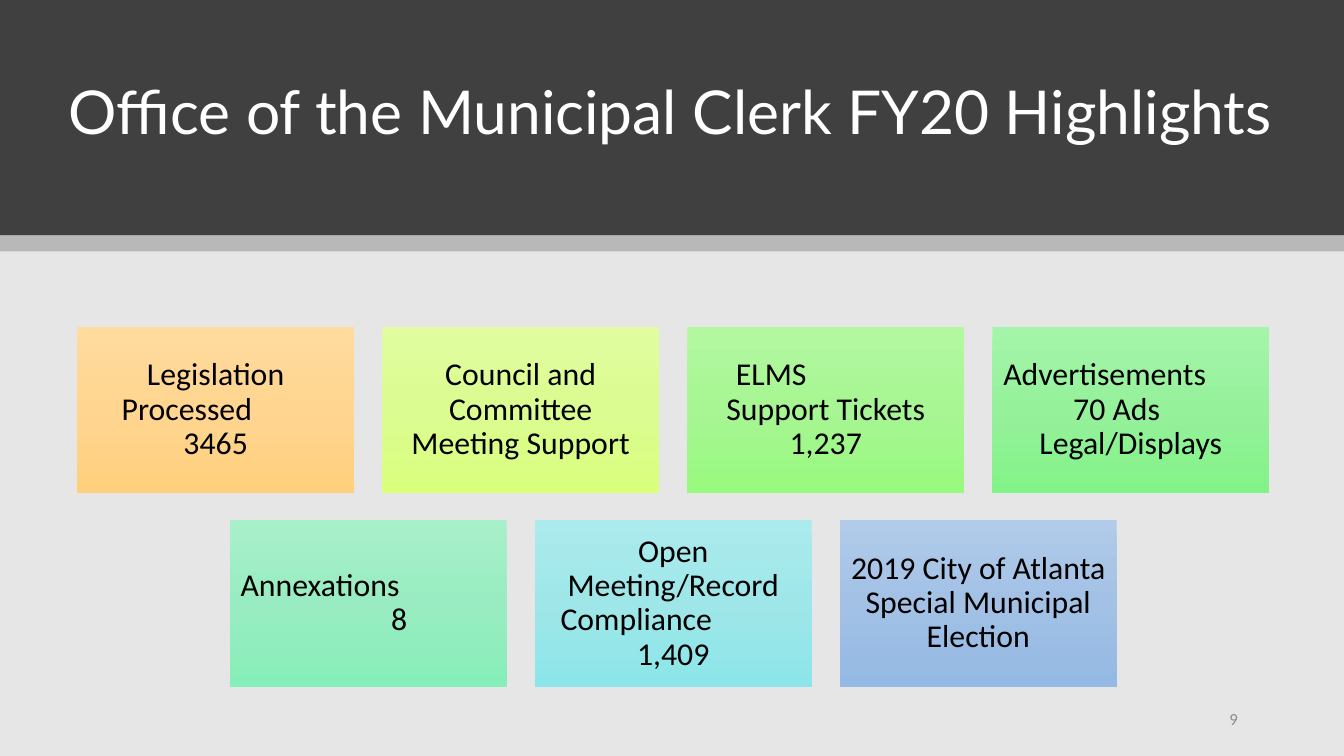
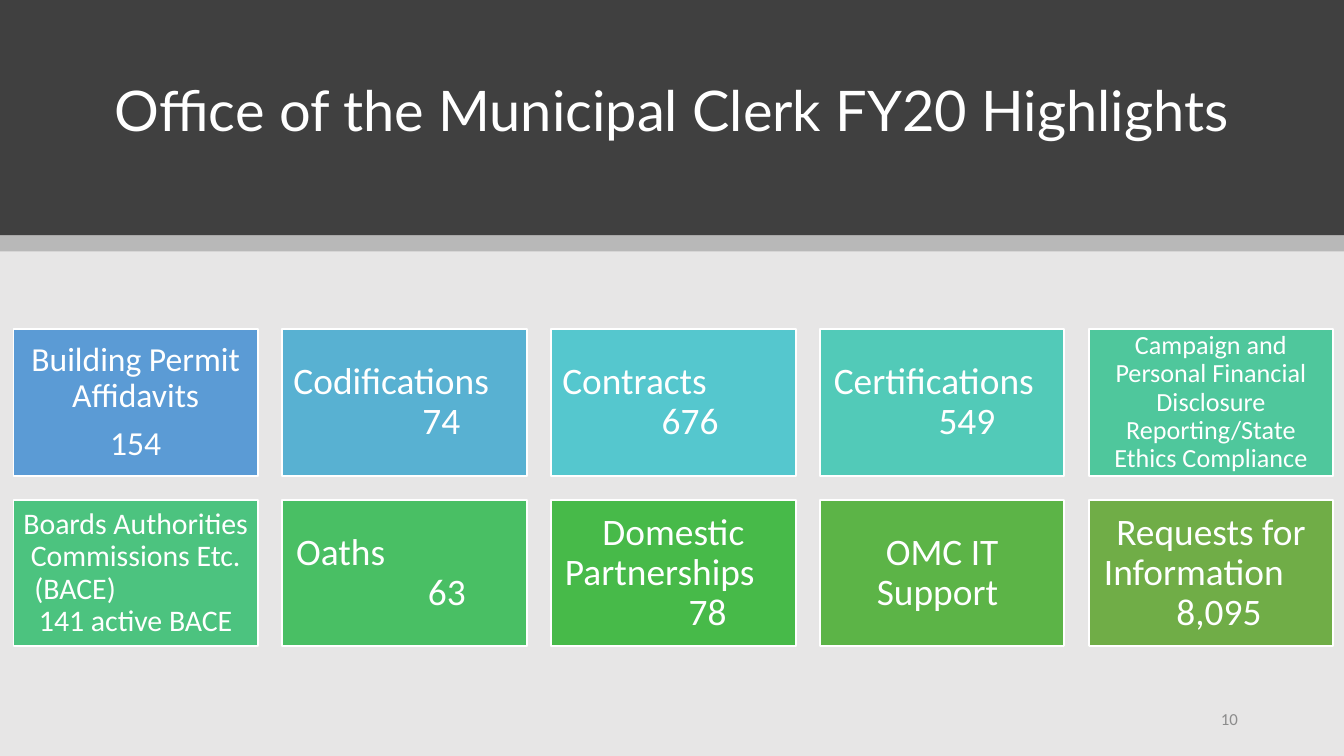
import copy
import pptx
import pptx.dml.color
import pptx.enum.shapes
import pptx.enum.text
import pptx.oxml.ns
import pptx.util

Inches = pptx.util.Inches
Pt = pptx.util.Pt
RGB = pptx.dml.color.RGBColor
ALIGN = pptx.enum.text.PP_ALIGN
ANCHOR = pptx.enum.text.MSO_ANCHOR
qn = pptx.oxml.ns.qn

WHITE = RGB(0xFF, 0xFF, 0xFF)
BLACK = RGB(0x00, 0x00, 0x00)
PALE = RGB(0xE7, 0xE6, 0xE6)
DARK = RGB(0x40, 0x40, 0x40)
GRAY = RGB(0x8C, 0x8C, 0x8C)
TITLE = "Office of the Municipal Clerk FY20 Highlights"

PAGES = [
    {
        "title": (0.41, 0.33, 9.16, 0.82), "size": 32.4, "align": ALIGN.LEFT,
        "page": "9", "ink": BLACK, "line": None,
        "top": 2.43, "wide": 2.06, "high": 1.24, "gap": (0.21, 0.2),
        "rows": [
            [
                ("FFDB9E FFD590 FFD07C", 17, ["Legislation", ("Processed", 0.26), "3465"]),
                ("E1FD9F DBFC91 D9FF7D", 17, ["Council and Committee Meeting Support"]),
                ("B3F8A1 A7F693 98FA7E", 17, [("ELMS", 0.29), "Support Tickets", "1,237"]),
                ("A4F4A9 96F19B 82F388", 17,
                 [("Advertisements", 0.01), ("70 Ads", 0.53), "Legal/Displays"]),
            ],
            [
                ("A8F0CA 99ECC1 86EEB9", 17, [("Annexations", 0.01), ("8", 1.13)]),
                ("ACEBED 9EE6E8 8CE6E9", 17,
                 ["Open Meeting/Record", ("Compliance", 0.12), "1,409"]),
                ("B1CBE9 A3C1E5 93B9E4", 17,
                 ["2019 City of Atlanta Special Municipal Election"]),
            ],
        ],
    },
    {
        "title": (0.29, 0.35, 9.42, 0.77), "size": 30, "align": ALIGN.CENTER,
        "page": "10", "ink": WHITE, "line": WHITE,
        "top": 2.45, "wide": 1.82, "high": 1.09, "gap": (0.18, 0.18),
        "rows": [
            [
                ("5B9BD5", 18, ["Building Permit Affidavits", "154"]),
                ("58B1D2", 20, [("Codifications", 0), ("74", 0.96)]),
                ("55C7CE", 20, [("Contracts", 0), ("676", 0.74)]),
                ("52CAB8", 20, [("Certifications", 0.02), ("549", 0.8)]),
                ("4FC79C", 14,
                 ["Campaign and Personal Financial Disclosure Reporting/State Ethics Compliance"]),
            ],
            [
                ("4CC37F", 16,
                 ["Boards Authorities Commissions Etc.", ("(BACE)", 0.09), "141 active BACE"]),
                ("49BF64", 20, [("Oaths", 0.02), ("63", 1)]),
                ("47BA49", 20, ["Domestic", ("Partnerships", 0.02), ("78", 0.94)]),
                ("5CB447", 20, ["OMC IT", ("Support", 0.34)]),
                ("70AD47", 20, ["Requests for", ("Information", 0.03), ("8,095", 0.57)]),
            ],
        ],
    },
]


def block(slide, spot, tones, line=None):
    shape = slide.shapes.add_shape(
        pptx.enum.shapes.MSO_SHAPE.RECTANGLE, *map(Inches, spot))
    shape.shadow.inherit = False
    if len(tones) == 1:
        shape.fill.solid()
        shape.fill.fore_color.rgb = tones[0]
    else:
        shape.fill.gradient()
        shape.fill.gradient_angle = 270
        stops = shape.element.spPr.find(".//" + qn("a:gsLst"))
        stops.append(copy.deepcopy(stops[0]))
        for n, stop in enumerate(shape.fill.gradient_stops):
            stop.position = n / 2
            stop.color.rgb = tones[n]
    if line is None:
        shape.line.fill.background()
    else:
        shape.line.color.rgb = line
        shape.line.width = Pt(1)
    return shape


def write(frame, lines, size, ink, face, align, anchor, inset=None):
    looks = {"word_wrap": True, "auto_size": pptx.enum.text.MSO_AUTO_SIZE.NONE,
             "vertical_anchor": anchor}
    if inset is not None:
        for side in ("left", "right", "top", "bottom"):
            looks["margin_" + side] = Inches(inset)
    for key, value in looks.items():
        setattr(frame, key, value)
    for n, item in enumerate(lines):
        text, shift = (item, None) if isinstance(item, str) else item
        para = frame.paragraphs[0] if n == 0 else frame.add_paragraph()
        para.alignment = align if shift is None else ALIGN.LEFT
        if shift:
            para._p.get_or_add_pPr().set("marL", str(Inches(shift)))
        for key, value in {"line_spacing": 0.9, "space_before": Pt(0),
                           "space_after": Pt(0)}.items():
            setattr(para, key, value)
        run = para.add_run()
        run.text = text
        for key, value in {"name": face, "size": Pt(size)}.items():
            setattr(run.font, key, value)
        run.font.color.rgb = ink


deck = pptx.Presentation()
deck.slide_width = Pt(720)
deck.slide_height = Pt(405)

for page in PAGES:
    slide = deck.slides.add_slide(deck.slide_layouts[5])
    block(slide, (0, 0, 10, deck.slide_height.inches), [PALE])
    block(slide, (0, 0, 10, 1.75), [DARK])
    strip = block(slide, (0, 1.75, 10, 0.12), [BLACK])
    tone = strip.element.spPr.find(qn("a:solidFill"))[0]
    tone.append(tone.makeelement(qn("a:alpha"), {"val": "20000"}))

    title = slide.shapes.title
    title.element.getparent().append(title.element)
    for key, value in zip(("left", "top", "width", "height"), page["title"]):
        setattr(title, key, Inches(value))
    write(title.text_frame, [TITLE], page["size"], WHITE, "Lato",
          page["align"], ANCHOR.BOTTOM)

    wide, high = page["wide"], page["high"]
    across, down = page["gap"]
    for r, row in enumerate(page["rows"]):
        start = 5.01 - (len(row) * (wide + across) - across) / 2
        for c, (tones, size, lines) in enumerate(row):
            spot = (start + c * (wide + across), page["top"] + r * (high + down), wide, high)
            tile = block(slide, spot, [RGB.from_string(t) for t in tones.split()], page["line"])
            write(tile.text_frame, lines, size, page["ink"], "Calibri",
                  ALIGN.CENTER, ANCHOR.MIDDLE, size / 240)
            if lines[-1] == "154":
                tile.text_frame.paragraphs[0].space_after = Pt(6.3)

    foot = slide.shapes.add_textbox(*map(Inches, (7.06, 5.21, 2.25, 0.3)))
    write(foot.text_frame, [page["page"]], 9, GRAY, "Calibri", ALIGN.RIGHT, ANCHOR.MIDDLE)

deck.save("out.pptx")
